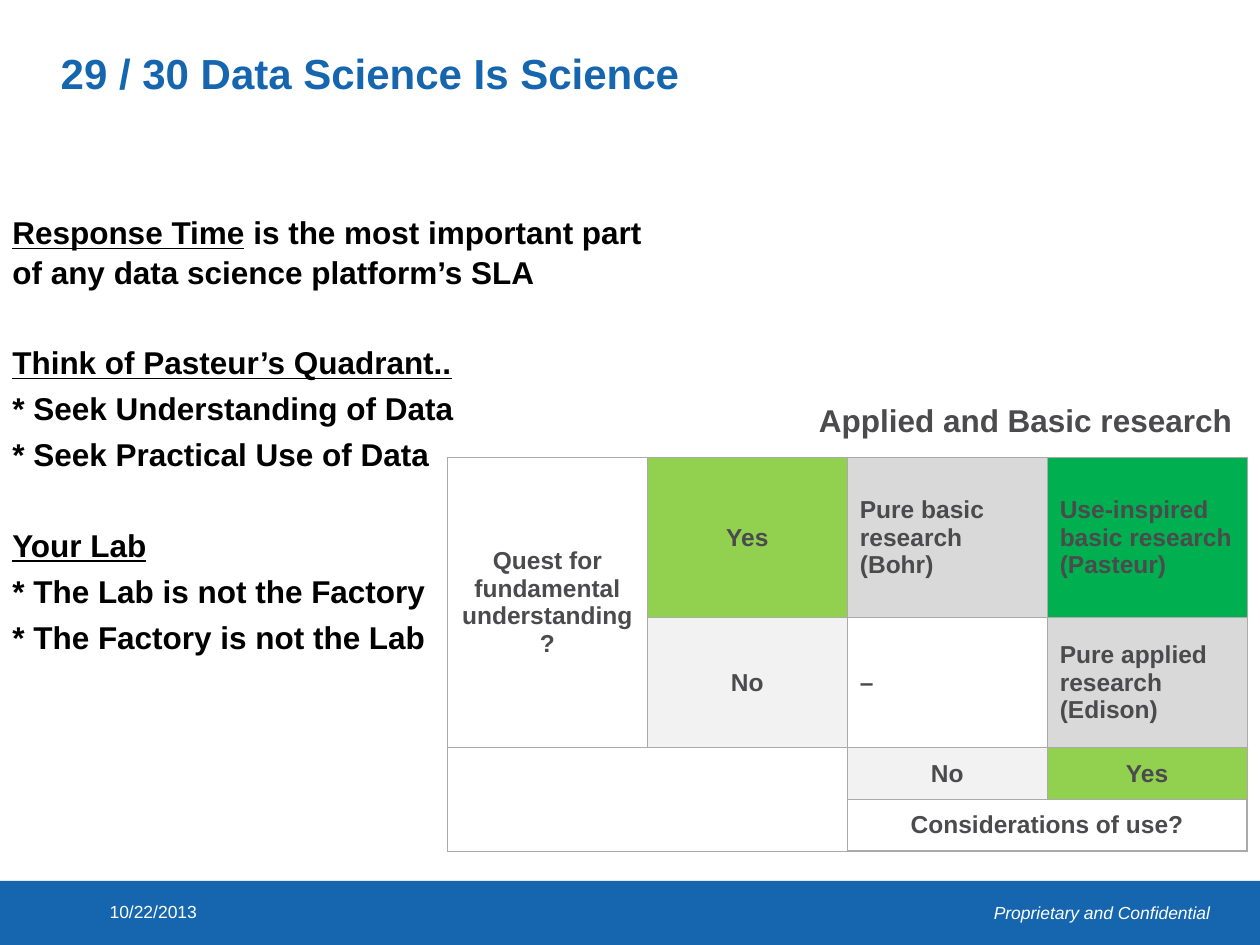
from pptx import Presentation
from pptx.dml.color import RGBColor
from pptx.enum.shapes import MSO_SHAPE
from pptx.enum.text import MSO_ANCHOR, MSO_AUTO_SIZE, PP_ALIGN
from pptx.oxml import parse_xml
from pptx.oxml.ns import nsdecls
from pptx.util import Cm, Pt

BLUE = RGBColor(0x16, 0x66, 0xAF)
WHITE = RGBColor(0xFF, 0xFF, 0xFF)
BLACK = RGBColor(0x00, 0x00, 0x00)
CHARCOAL = RGBColor(0x4B, 0x4A, 0x4C)
BORDER = RGBColor(0xAA, 0xAA, 0xAA)
LIME = RGBColor(0x92, 0xD0, 0x50)
GREEN = RGBColor(0x00, 0xB0, 0x50)
SILVER = RGBColor(0xD9, 0xD9, 0xD9)
PALE = RGBColor(0xF2, 0xF2, 0xF2)

TITLE = {"size": Pt(24), "bold": True}
BODY = {"size": Pt(18), "bold": True}
CELL = {"size": Pt(14), "bold": True}
SMALL = {"size": Pt(10)}
SMALL_ITALIC = {"size": Pt(10), "italic": True}

TIGHT, SECTION = Pt(3.6), Pt(28.9)
STATEMENTS = [
    (Pt(0), [("Response Time", True),
             (" is the most important part \nof any data science platform’s SLA", False)]),
    (SECTION, [("Think of Pasteur’s Quadrant..", True)]),
    (TIGHT, [("* Seek Understanding of Data", False)]),
    (TIGHT, [("* Seek Practical Use of Data", False)]),
    (SECTION, [("Your Lab", True)]),
    (TIGHT, [("* The Lab is not the Factory", False)]),
    (TIGHT, [("* The Factory is not the Lab", False)]),
]

CENTER, LEFT = PP_ALIGN.CENTER, PP_ALIGN.LEFT
QUADRANT = {
    (0, 0): (["Quest for fundamental\nunderstanding?"], CENTER, WHITE),
    (0, 1): (["Yes"], CENTER, LIME),
    (0, 2): (["Pure basic research", "(Bohr)"], LEFT, SILVER),
    (0, 3): (["Use-inspired basic research", "(Pasteur)"], LEFT, GREEN),
    (1, 1): (["No"], CENTER, PALE),
    (1, 2): (["–"], LEFT, None),
    (1, 3): (["Pure applied research", "(Edison)"], LEFT, SILVER),
    (2, 0): ([], LEFT, WHITE),
    (2, 2): (["No"], CENTER, PALE),
    (2, 3): (["Yes"], CENTER, LIME),
    (3, 2): (["Considerations of use?"], CENTER, WHITE),
}
MERGES = [((0, 0), (1, 0)), ((2, 0), (3, 1)), ((3, 2), (3, 3))]
THICK_SIDES = {(0, 0): "LT", (2, 2): "B", (2, 3): "B", (3, 2): "LRTB", (3, 3): "LRTB"}


class SlideBuilder:
    """Holds the slide style and draws each kind of element."""

    def __init__(self, slide, font_name="Arial"):
        self.slide = slide
        self.font_name = font_name

    def add_text(self, para, text, style, color, underline=False):
        for index, line in enumerate(text.split("\n")):
            if index:
                para.add_line_break()
            span = para.add_run()
            span.text = line
            values = {"name": self.font_name, "underline": underline, **style}
            for name, value in values.items():
                setattr(span.font, name, value)
            span.font.color.rgb = color

    def title(self, text, left, top, width, height):
        box = self.slide.shapes.title
        box.left, box.top, box.width, box.height = left, top, width, height
        frame = box.text_frame
        frame.auto_size = MSO_AUTO_SIZE.NONE
        frame.vertical_anchor = MSO_ANCHOR.TOP
        para = frame.paragraphs[0]
        para.alignment, para.line_spacing = LEFT, 0.88
        self.add_text(para, text, TITLE, BLUE)

    def band(self, left, top, width, height, color):
        band = self.slide.shapes.add_shape(MSO_SHAPE.RECTANGLE, left, top, width, height)
        band.shadow.inherit = False
        band.fill.solid()
        band.fill.fore_color.rgb = color
        band.line.fill.background()

    def frame(self, left, top, width, height, wrap=True):
        frame = self.slide.shapes.add_textbox(left, top, width, height).text_frame
        frame.word_wrap = wrap
        return frame

    def label(self, text, left, top, width, height, style, color, align=LEFT, wrap=True):
        frame = self.frame(left, top, width, height, wrap)
        if not wrap:
            frame.auto_size = MSO_AUTO_SIZE.SHAPE_TO_FIT_TEXT
        frame.paragraphs[0].alignment = align
        self.add_text(frame.paragraphs[0], text, style, color)

    def statements(self, items, left, top, width, height):
        frame = self.frame(left, top, width, height)
        for index, (gap, spans) in enumerate(items):
            para = frame.add_paragraph() if index else frame.paragraphs[0]
            para.space_before, para.line_spacing = gap, 1.05
            for text, underline in spans:
                self.add_text(para, text, BODY, BLACK, underline)

    def borders(self, cell, thick):
        properties = cell._tc.get_or_add_tcPr()
        for side in "LRTB":
            width = Pt(1 if side in thick else 0.75)
            properties.append(parse_xml(
                f'<a:ln{side} {nsdecls("a")} w="{width}"><a:solidFill>'
                f'<a:srgbClr val="{BORDER}"/></a:solidFill></a:ln{side}>'))

    def fill_cell(self, cell, lines, align, color):
        cell.vertical_anchor = MSO_ANCHOR.MIDDLE
        if color is None:
            cell.fill.background()
        else:
            cell.fill.solid()
            cell.fill.fore_color.rgb = color
        for index, line in enumerate(lines):
            frame = cell.text_frame
            para = frame.add_paragraph() if index else frame.paragraphs[0]
            para.alignment = align
            self.add_text(para, line, CELL, CHARCOAL)

    def table(self, left, top, column_width, row_heights, columns=4):
        rows = len(row_heights)
        table = self.slide.shapes.add_table(
            rows, columns, left, top, column_width * columns, sum(row_heights)).table
        table.first_row = table.horz_banding = False
        for column in table.columns:
            column.width = column_width
        for row, height in zip(table.rows, row_heights):
            row.height = height
        for first, last in MERGES:
            table.cell(*first).merge(table.cell(*last))
        for row in range(rows):
            for column in range(columns):
                place = row, column
                cell = table.cell(*place)
                self.borders(cell, THICK_SIDES.get(place, ""))
                self.fill_cell(cell, *QUADRANT.get(place, ([], LEFT, WHITE)))


def main():
    deck = Presentation()
    deck.slide_width, deck.slide_height = Cm(25.4), Cm(19.05)
    page = SlideBuilder(deck.slides.add_slide(deck.slide_layouts[5]))
    page.band(Cm(0), Cm(17.76), Cm(25.4), Cm(1.29), BLUE)
    page.label("Proprietary and Confidential", Cm(18.67), Cm(18.06), Cm(5.97), Cm(0.81),
               SMALL_ITALIC, WHITE, PP_ALIGN.RIGHT)
    page.title("29 / 30 Data Science Is Science", Cm(0.97), Cm(0.97), Cm(20.5), Cm(1.88))
    page.statements(STATEMENTS, Cm(0), Cm(4.14), Cm(25.4), Cm(12.07))
    page.label("10/22/2013", Cm(1.96), Cm(18.03), Cm(5.28), Cm(0.79), SMALL, WHITE)
    page.table(Cm(9.02), Cm(9.22), Cm(4.03), [Cm(3.23), Cm(2.49), Cm(1.04), Cm(1.04)])
    page.label("Applied and Basic research", Cm(16.26), Cm(7.95), Cm(8.92), Cm(1.02),
               BODY, CHARCOAL, wrap=False)
    deck.save("out.pptx")


if __name__ == "__main__":
    main()
